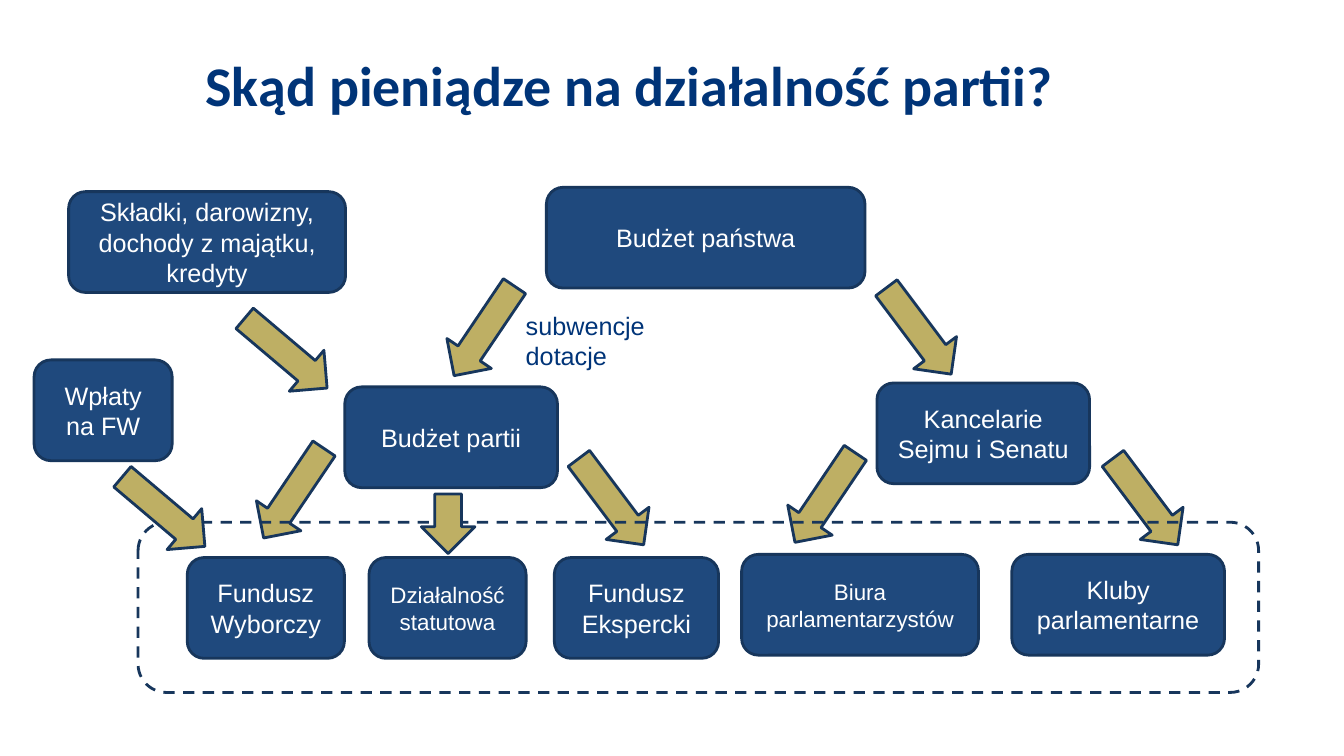
from pptx import Presentation
from pptx.dml.color import RGBColor
from pptx.enum.dml import MSO_LINE
from pptx.enum.shapes import MSO_SHAPE
from pptx.enum.text import MSO_ANCHOR, PP_ALIGN
from pptx.util import Cm, Pt

NAVY, BLUE, EDGE, GOLD, WHITE = "003478", "1F497D", "17365C", "BEAF64", "FFFFFF"
TITLE = "Skąd pieniądze na działalność partii?"
GRANTS = ["subwencje", "dotacje"]
BOX_H = 2.54
BOXES = [
    ("Składki, darowizny, dochody z majątku, kredyty", 1.73, 4.83, 6.98, 18),
    ("Budżet państwa", 13.77, 4.72, 8.03, 18),
    ("Wpłaty na FW", 0.86, 9.07, 3.48, 18),
    ("Budżet partii", 8.69, 9.75, 5.36, 18),
    ("Kancelarie Sejmu i Senatu", 22.1, 9.65, 5.36, 18),
    ("Fundusz Wyborczy", 4.72, 14.05, 3.96, 18),
    ("Działalność statutowa", 9.3, 14.05, 3.96, 16),
    ("Fundusz Ekspercki", 13.97, 14.05, 4.14, 18),
    ("Biura parlamentarzystów", 18.69, 13.97, 5.97, 16),
    ("Kluby parlamentarne", 25.5, 13.97, 5.36, 18),
]
ARROW_W, LONG, SHORT = 1.35, 2.72, 1.5
TO_LEFT, TO_RIGHT, FLAT_RIGHT = 34, 323.1, 310.2
ARROWS_BEHIND = [
    (11.53, 6.98, LONG, TO_LEFT),
    (22.48, 6.98, LONG, TO_RIGHT),
    (6.73, 11.07, LONG, TO_LEFT),
    (20.12, 11.18, LONG, TO_LEFT),
    (14.73, 11.28, LONG, TO_RIGHT),
    (28.19, 11.28, LONG, TO_RIGHT),
    (6.53, 7.54, LONG, FLAT_RIGHT),
]
ARROWS_FRONT = [
    (3.45, 11.53, LONG, FLAT_RIGHT),
    (10.62, 12.45, SHORT, 0),
]
FRAME = (3.48, 13.16, 28.24, 4.29)

prs = Presentation()
prs.slide_width, prs.slide_height = Cm(33.87), Cm(19.05)
s = prs.slides.add_slide(prs.slide_layouts[6])


def color(hex_string):
    return RGBColor.from_string(hex_string)


def add_run(p, text, size, hex_string, font="Arial", bold=False):
    r = p.add_run()
    r.text = text
    r.font.name, r.font.size, r.font.bold = font, Pt(size), bold
    r.font.color.rgb = color(hex_string)


def add_text(x, y, w, h):
    tf = s.shapes.add_textbox(Cm(x), Cm(y), Cm(w), Cm(h)).text_frame
    tf.word_wrap = True
    return tf


def add_shape(kind, x, y, w, h, fill=None):
    sp = s.shapes.add_shape(kind, Cm(x), Cm(y), Cm(w), Cm(h))
    sp.shadow.inherit = False
    if fill:
        sp.fill.solid()
        sp.fill.fore_color.rgb = color(fill)
    else:
        sp.fill.background()
    sp.line.color.rgb = color(EDGE)
    sp.line.width = Pt(2)
    return sp


def add_arrows(arrows):
    for x, y, length, angle in arrows:
        sp = add_shape(MSO_SHAPE.DOWN_ARROW, x, y, ARROW_W, length, GOLD)
        sp.rotation = angle


tf = add_text(4.93, 1.32, 26.21, 1.88)
tf.vertical_anchor = MSO_ANCHOR.MIDDLE
p = tf.paragraphs[0]
p.line_spacing = 0.85
add_run(p, TITLE, 40, NAVY, "Calibri", True)

for text, x, y, w, size in BOXES:
    tf = add_shape(MSO_SHAPE.ROUNDED_RECTANGLE, x, y, w, BOX_H, BLUE).text_frame
    tf.word_wrap = True
    tf.vertical_anchor = MSO_ANCHOR.MIDDLE
    p = tf.paragraphs[0]
    p.alignment = PP_ALIGN.CENTER
    add_run(p, text, size, WHITE)

add_arrows(ARROWS_BEHIND)
frame = add_shape(MSO_SHAPE.ROUNDED_RECTANGLE, *FRAME)
frame.line.dash_style = MSO_LINE.DASH
add_arrows(ARROWS_FRONT)

p = add_text(13, 7.7, 3.94, 1.8).paragraphs[0]
for i, line in enumerate(GRANTS):
    if i:
        p.add_line_break()
    add_run(p, line, 18, NAVY)

prs.save("out.pptx")
